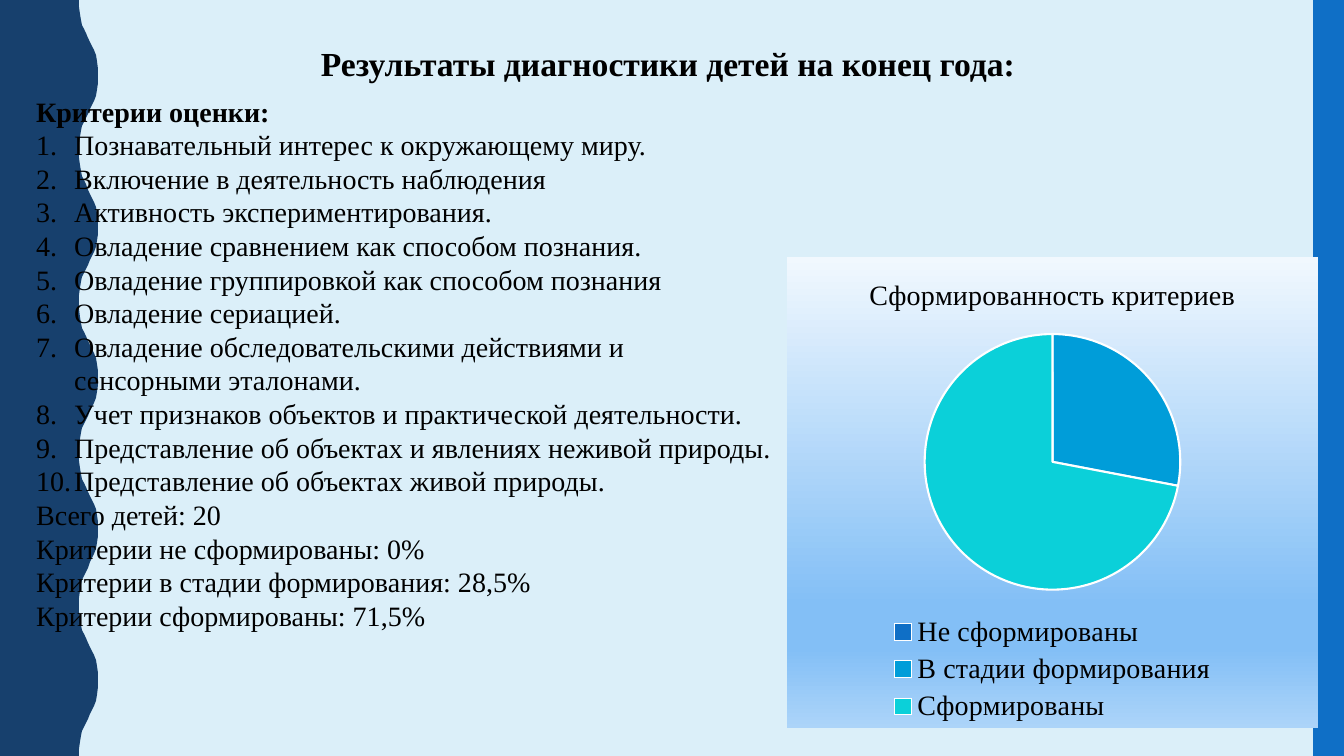
"""Build the slide with the year-end diagnostic results of the children."""
from dataclasses import dataclass

from lxml.etree import SubElement
from pptx import Presentation
from pptx.chart.data import CategoryChartData
from pptx.dml.color import RGBColor
from pptx.enum.chart import XL_CHART_TYPE, XL_LEGEND_POSITION
from pptx.enum.shapes import MSO_SHAPE
from pptx.enum.text import MSO_ANCHOR, MSO_AUTO_SIZE, PP_ALIGN
from pptx.oxml import parse_xml
from pptx.oxml.ns import nsdecls, qn
from pptx.util import Pt


@dataclass(frozen=True)
class Theme:
    background: str = "DBEFF9"
    wave: str = "17406D"
    stripe: str = "0F6FC6"
    text: str = "000000"
    slice_border: str = "FFFFFF"
    slices: tuple = ("0F6FC6", "009DD9", "0BD0D9")
    gradient: tuple = ((0, "F1F8FE"), (74, "83BFF6"), (83, "83BFF6"), (100, "ACD4F9"))
    font: str = "Times New Roman"
    chart_font: str = "Cabin"
    title_size: int = 24
    body_size: int = 20
    chart_size: int = 10


THEME = Theme()
WIDTH, HEIGHT = 1344, 756
SCALE = 12192000 / WIDTH


def px(length):
    return round(length * SCALE)


def style_font(font, size, bold=False, name=THEME.font):
    font.name = name
    font.size = Pt(size)
    font.bold = bold
    font.color.rgb = RGBColor.from_string(THEME.text)


presentation = Presentation()
presentation.slide_width, presentation.slide_height = px(WIDTH), px(HEIGHT)
slide = presentation.slides.add_slide(presentation.slide_layouts[1])
slide.background.fill.solid()
slide.background.fill.fore_color.rgb = RGBColor.from_string(THEME.background)

wave_x = (79, 79, 80, 81, 82, 84, 86, 88, 90, 92, 94, 96, 97, 98, 98)
wave_y = (0, 7, 14, 20, 25, 29, 33, 38, 42, 46, 50, 55, 61, 68, 75)
half_waves = 10
half_height = HEIGHT / half_waves
edge = []
for half in range(half_waves):
    across = wave_x if half % 2 == 0 else wave_x[::-1]
    edge += [(x, round((half + y / 75) * half_height)) for x, y in zip(across, wave_y)]
builder = slide.shapes.build_freeform(0, 0, scale=SCALE)
builder.add_line_segments(edge + [(0, HEIGHT)], close=True)
wave = builder.convert_to_shape()
stripe = slide.shapes.add_shape(MSO_SHAPE.RECTANGLE, px(1313), 0, px(31), px(HEIGHT))
for shape, color in ((wave, THEME.wave), (stripe, THEME.stripe)):
    shape.shadow.inherit = False
    shape.fill.solid()
    shape.fill.fore_color.rgb = RGBColor.from_string(color)
    shape.line.fill.background()

title, body = slide.shapes.title, slide.placeholders[1]
for placeholder, box in ((title, (26, 38, 1284, 50)), (body, (26, 89, 760, 621))):
    placeholder.element.getparent().append(placeholder.element)
    placeholder.left, placeholder.top, placeholder.width, placeholder.height = map(px, box)
    placeholder.text_frame.word_wrap = True
    placeholder.text_frame.auto_size = MSO_AUTO_SIZE.NONE
    placeholder.text_frame.vertical_anchor = MSO_ANCHOR.TOP

title.text_frame.text = "Результаты диагностики детей на конец года:"
title.text_frame.paragraphs[0].alignment = PP_ALIGN.CENTER
style_font(title.text_frame.paragraphs[0].runs[0].font, THEME.title_size, bold=True)

heading = "Критерии оценки:"
criteria = (
    "Познавательный интерес к окружающему миру.",
    "Включение в деятельность наблюдения",
    "Активность экспериментирования.",
    "Овладение сравнением как способом познания.",
    "Овладение группировкой как способом познания",
    "Овладение сериацией.",
    "Овладение обследовательскими действиями и сенсорными эталонами.",
    "Учет признаков объектов и практической деятельности.",
    "Представление об объектах и явлениях неживой природы.",
    "Представление об объектах живой природы.",
)
totals = (
    "Всего детей: 20",
    "Критерии не сформированы: 0%",
    "Критерии в стадии формирования: 28,5%",
    "Критерии сформированы: 71,5%",
)
left_aligned = criteria[6]
body.text_frame.text = "\n".join((heading, *criteria, *totals))
for paragraph in body.text_frame.paragraphs:
    numbered = paragraph.text in criteria
    paragraph.alignment = PP_ALIGN.LEFT if paragraph.text == left_aligned else PP_ALIGN.JUSTIFY
    paragraph.space_before = Pt(0)
    properties = paragraph._p.get_or_add_pPr()
    indent = px(38) if numbered else 0
    properties.set("marL", str(indent))
    properties.set("indent", str(-indent))
    if numbered:
        SubElement(properties, qn("a:buFont"), typeface=THEME.font)
        SubElement(properties, qn("a:buAutoNum"), type="arabicPeriod")
    else:
        SubElement(properties, qn("a:buNone"))
    style_font(paragraph.runs[0].font, THEME.body_size, bold=paragraph.text == heading)

chart_title = "Сформированность критериев"
chart_data = CategoryChartData()
chart_data.categories = ("Не сформированы", "В стадии формирования", "Сформированы")
chart_data.add_series(chart_title, (0, 28, 72))
chart = slide.shapes.add_chart(
    XL_CHART_TYPE.PIE, px(787), px(257), px(531), px(471), chart_data
).chart
style_font(chart.font, THEME.chart_size, name=THEME.chart_font)
chart.has_title = True
chart.chart_title.include_in_layout = False
chart.chart_title.text_frame.text = chart_title
style_font(chart.chart_title.text_frame.paragraphs[0].runs[0].font, THEME.body_size)
chart.has_legend = True
chart.legend.position = XL_LEGEND_POSITION.BOTTOM
chart.legend.include_in_layout = False
style_font(chart.legend.font, THEME.body_size)
for index, color in enumerate(THEME.slices):
    point_format = chart.plots[0].series[0].points[index].format
    point_format.fill.solid()
    point_format.fill.fore_color.rgb = RGBColor.from_string(color)
    point_format.line.color.rgb = RGBColor.from_string(THEME.slice_border)
    point_format.line.width = Pt(1.5)

stops = "".join(
    f'<a:gs pos="{position * 1000}"><a:srgbClr val="{color}"/></a:gs>'
    for position, color in THEME.gradient
)
chart_fill = parse_xml(
    f'<c:spPr {nsdecls("c", "a")}><a:gradFill><a:gsLst>{stops}</a:gsLst>'
    '<a:lin ang="5400000" scaled="0"/></a:gradFill><a:ln><a:noFill/></a:ln></c:spPr>'
)
chart.element.find(qn("c:chart")).addnext(chart_fill)

presentation.save("out.pptx")
